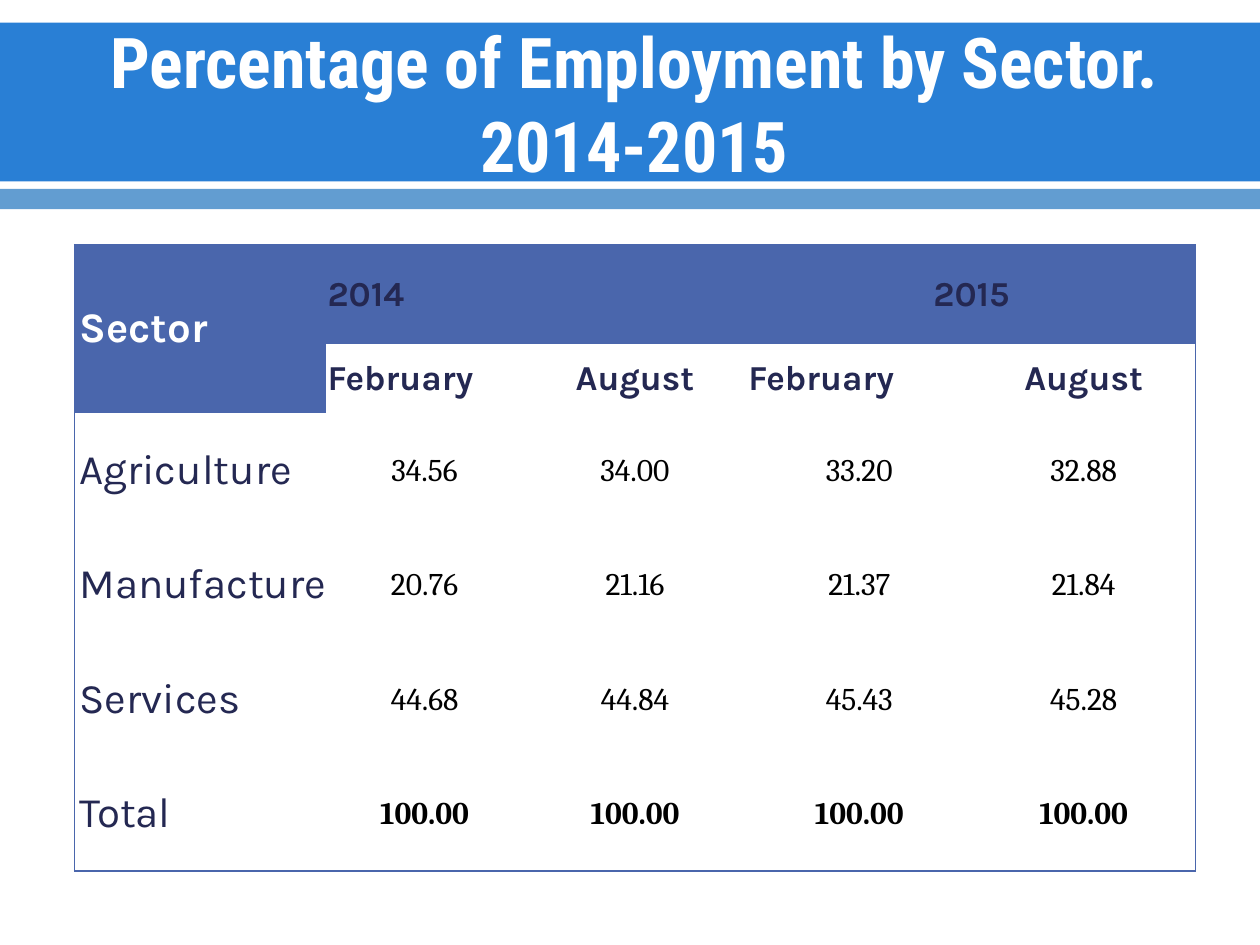
from dataclasses import dataclass

from lxml.etree import SubElement
from pptx import Presentation
from pptx.dml.color import RGBColor
from pptx.enum.shapes import MSO_SHAPE
from pptx.enum.text import MSO_ANCHOR, PP_ALIGN
from pptx.oxml.ns import qn
from pptx.util import Pt

INDIGO = "4A66AC"
NAVY = "242852"
WHITE = "FFFFFF"
COLUMN_WIDTHS = [144, 112.3, 128.2, 128.2, 128.2]
ROW_HEIGHTS = [56.9, 39.6] + [65.4] * 4


@dataclass(frozen=True)
class Band:
    top: float
    height: float
    color: str


@dataclass(frozen=True)
class SectorRow:
    name: str
    values: tuple[str, ...]
    bold: bool = False


BANDS = [Band(13, 90.7, "297FD5"), Band(108, 11.5, "629DD1")]
SECTORS = [
    SectorRow("Agriculture", ("34.56", "34.00", "33.20", "32.88")),
    SectorRow("Manufacture", ("20.76", "21.16", "21.37", "21.84")),
    SectorRow("Services", ("44.68", "44.84", "45.43", "45.28")),
    SectorRow("Total", ("100.00",) * 4, bold=True),
]


def rgb(color: str) -> RGBColor:
    return RGBColor.from_string(color)


def write_text(frame, text: str, *, size: float, font: str = "Karla", color: str = NAVY,
               bold: bool = False, align=PP_ALIGN.LEFT) -> None:
    paragraph = frame.paragraphs[0]
    paragraph.alignment = align
    run = paragraph.add_run()
    run.text = text
    run.font.size = Pt(size)
    run.font.name = font
    run.font.bold = bold
    run.font.color.rgb = rgb(color)


def draw_band(slide, band: Band, width: int) -> None:
    shape = slide.shapes.add_shape(MSO_SHAPE.RECTANGLE, 0, Pt(band.top), width, Pt(band.height))
    shape.shadow.inherit = False
    shape.fill.solid()
    shape.fill.fore_color.rgb = rgb(band.color)
    shape.line.fill.background()


def draw_title(slide) -> None:
    shape = slide.shapes.add_textbox(Pt(25.2), Pt(14.4), Pt(674.6), Pt(87.8))
    frame = shape.text_frame
    frame.word_wrap = True
    frame.vertical_anchor = MSO_ANCHOR.MIDDLE
    write_text(frame, "Percentage of Employment by Sector. 2014-2015", size=40,
               font="Roboto Condensed", color=WHITE, bold=True, align=PP_ALIGN.CENTER)


def set_borders(cell, visible: dict[str, bool]) -> None:
    properties = cell._tc.get_or_add_tcPr()
    for side, shown in visible.items():
        line = SubElement(properties, qn(f"a:ln{side}"), w=str(Pt(0.79)))
        if shown:
            fill = SubElement(line, qn("a:solidFill"))
            SubElement(fill, qn("a:srgbClr"), val=INDIGO)
        else:
            SubElement(line, qn("a:noFill"))


def format_cell(cell, row: int, column: int) -> None:
    set_borders(cell, {
        "L": column == 0,
        "R": column == len(COLUMN_WIDTHS) - 1,
        "T": row == 0,
        "B": row == len(ROW_HEIGHTS) - 1,
    })
    if row == 0 or (row == 1 and column == 0):
        cell.fill.solid()
        cell.fill.fore_color.rgb = rgb(INDIGO)
    else:
        cell.fill.background()
    cell.vertical_anchor = MSO_ANCHOR.MIDDLE
    edge = 0 if column == 0 else 0.7
    cell.margin_left = Pt(2.9 if column == 0 else edge)
    cell.margin_top = cell.margin_right = Pt(edge)
    cell.margin_bottom = 0


def draw_table(slide) -> None:
    graphic = slide.shapes.add_table(
        len(ROW_HEIGHTS), len(COLUMN_WIDTHS), Pt(42.5), Pt(139.7),
        Pt(sum(COLUMN_WIDTHS)), Pt(sum(ROW_HEIGHTS)))
    table = graphic.table
    table.first_row = table.horz_banding = False
    for column, width in zip(table.columns, COLUMN_WIDTHS):
        column.width = Pt(width)
    for row, height in zip(table.rows, ROW_HEIGHTS):
        row.height = Pt(height)
    for row in range(len(ROW_HEIGHTS)):
        for column in range(len(COLUMN_WIDTHS)):
            format_cell(table.cell(row, column), row, column)

    table.cell(0, 0).merge(table.cell(1, 0))
    write_text(table.cell(0, 0).text_frame, "Sector", size=24, color=WHITE, bold=True)
    for column, year, align in ((1, "2014", PP_ALIGN.LEFT), (3, "2015", PP_ALIGN.CENTER)):
        table.cell(0, column).merge(table.cell(0, column + 1))
        write_text(table.cell(0, column).text_frame, year, size=20, bold=True, align=align)
        write_text(table.cell(1, column).text_frame, "February", size=20, bold=True)
        write_text(table.cell(1, column + 1).text_frame, "August", size=20, bold=True,
                   align=PP_ALIGN.CENTER)

    for row, sector in enumerate(SECTORS, start=2):
        write_text(table.cell(row, 0).text_frame, sector.name, size=24)
        for column, value in enumerate(sector.values, start=1):
            write_text(table.cell(row, column).text_frame, value, size=18, font="Cambria",
                       color="000000", bold=sector.bold, align=PP_ALIGN.CENTER)


def main() -> None:
    presentation = Presentation()
    presentation.slide_width = Pt(720)
    presentation.slide_height = Pt(540)
    slide = presentation.slides.add_slide(presentation.slide_layouts[6])
    for band in BANDS:
        draw_band(slide, band, presentation.slide_width)
    draw_table(slide)
    draw_title(slide)
    presentation.save("out.pptx")


if __name__ == "__main__":
    main()
